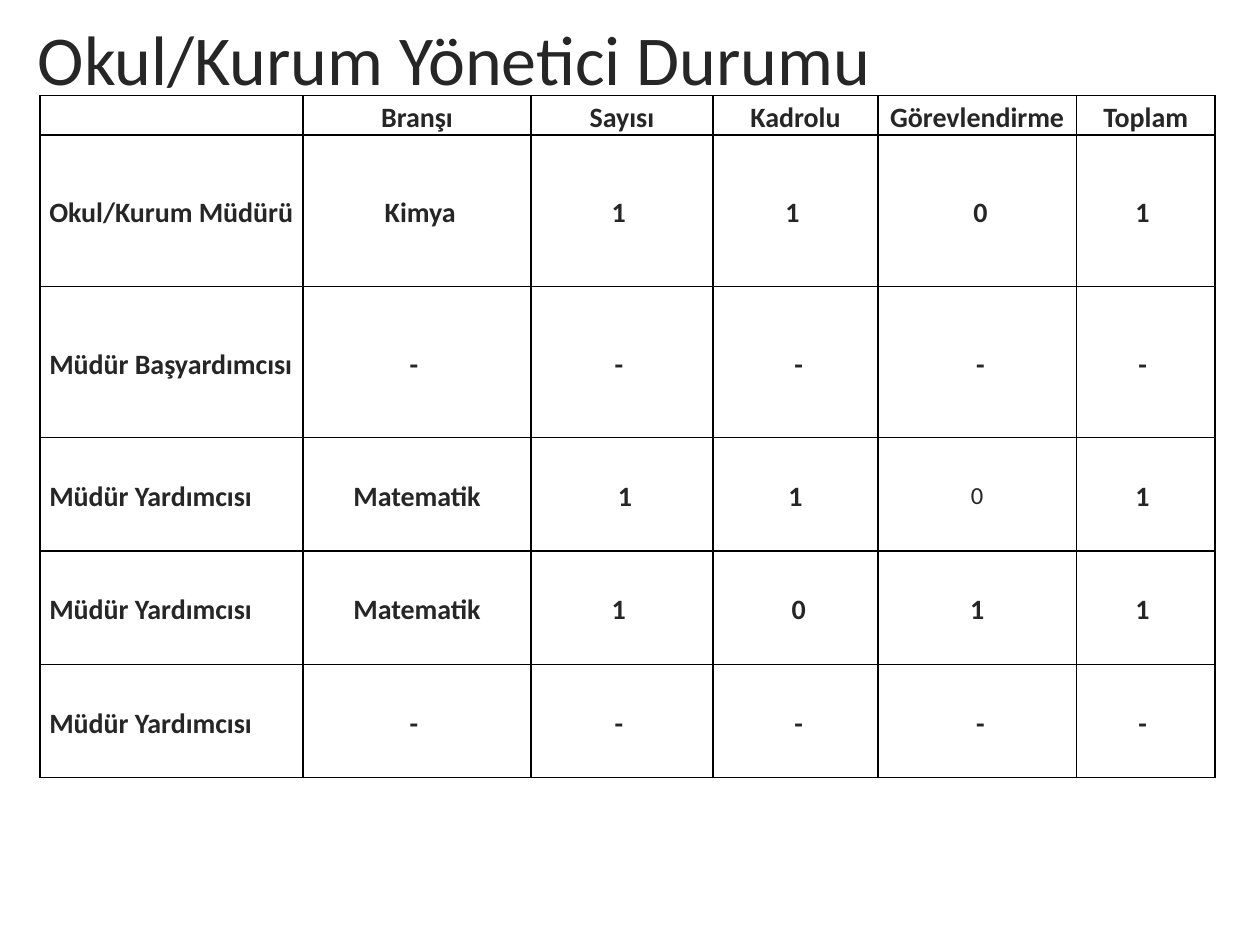
from dataclasses import dataclass

from lxml.etree import SubElement
from pptx import Presentation
from pptx.dml.color import RGBColor
from pptx.enum.text import MSO_ANCHOR, PP_ALIGN
from pptx.oxml.ns import qn
from pptx.util import Pt

INK = RGBColor(0x26, 0x26, 0x26)
BORDER = RGBColor(0x00, 0x00, 0x00)
FONT = "Calibri"
HARD_SPACE = chr(160)  # written as ~ in the table texts


@dataclass
class TextStyle:
    size: float
    bold: bool


TITLE = TextStyle(40, False)
STRONG = TextStyle(16, True)
LIGHT = TextStyle(14, False)
LIGHT_CELL = (3, 4)

COLUMN_WIDTHS = [150.4, 130.3, 103.9, 94.5, 113.2, 79.4]
ROW_HEIGHTS = [21.6, 86.4, 86.4, 64.8, 64.8, 64.8]
EMPTY_POST = ["-~", "-~", "~-", "~-", "-~"]
ROWS = [
    ["", "Branşı", "Sayısı", "Kadrolu", "Görevlendirme", "Toplam"],
    ["Okul/Kurum Müdürü", "~Kimya", "1~", "1~", "~0", "1~"],
    ["Müdür Başyardımcısı", *EMPTY_POST],
    ["Müdür Yardımcısı", "Matematik", "~1", "1", "0", "1~"],
    ["Müdür Yardımcısı", "Matematik", "1~", "~0", "1", "1~"],
    ["Müdür Yardımcısı", *EMPTY_POST],
]


def format_text(para, style: TextStyle) -> None:
    for span in para.runs:
        span.font.name = FONT
        span.font.size = Pt(style.size)
        span.font.bold = style.bold
        span.font.color.rgb = INK


def add_borders(cell) -> None:
    properties = cell._tc.get_or_add_tcPr()
    for side in ("a:lnL", "a:lnR", "a:lnT", "a:lnB"):
        line = SubElement(properties, qn(side), w=str(Pt(1)))
        fill = SubElement(line, qn("a:solidFill"))
        SubElement(fill, qn("a:srgbClr"), val=str(BORDER))


def fill_cell(cell, text: str, align: PP_ALIGN, style: TextStyle) -> None:
    add_borders(cell)
    cell.fill.background()
    cell.vertical_anchor = MSO_ANCHOR.MIDDLE
    cell.margin_left = cell.margin_right = Pt(5.4)
    cell.margin_top = cell.margin_bottom = 0
    para = cell.text_frame.paragraphs[0]
    para.text = text.replace("~", HARD_SPACE)
    para.alignment = align
    para.line_spacing = 1.15
    format_text(para, style)


def add_staff_table(page) -> None:
    table = page.shapes.add_table(
        len(ROWS), len(COLUMN_WIDTHS), Pt(22.8), Pt(54.7),
        Pt(sum(COLUMN_WIDTHS)), Pt(sum(ROW_HEIGHTS)),
    ).table
    table.first_row = table.horz_banding = False
    for column, width in zip(table.columns, COLUMN_WIDTHS):
        column.width = Pt(width)
    for row, height in zip(table.rows, ROW_HEIGHTS):
        row.height = Pt(height)
    for r, texts in enumerate(ROWS):
        for c, text in enumerate(texts):
            align = PP_ALIGN.CENTER if c else PP_ALIGN.LEFT
            style = LIGHT if (r, c) == LIGHT_CELL else STRONG
            fill_cell(table.cell(r, c), text, align, style)


def add_title(page) -> None:
    title = page.shapes.title
    title.left, title.top = Pt(14.4), Pt(5.8)
    title.width, title.height = Pt(681.8), Pt(54)
    title.text_frame.text = "Okul/Kurum Yönetici Durumu"
    title.text_frame.vertical_anchor = MSO_ANCHOR.MIDDLE
    para = title.text_frame.paragraphs[0]
    para.alignment = PP_ALIGN.LEFT
    format_text(para, TITLE)


def main() -> None:
    deck = Presentation()
    deck.slide_width, deck.slide_height = Pt(720), Pt(540)
    page = deck.slides.add_slide(deck.slide_layouts.get_by_name("Title Only"))
    add_title(page)
    add_staff_table(page)
    deck.save("out.pptx")


if __name__ == "__main__":
    main()
